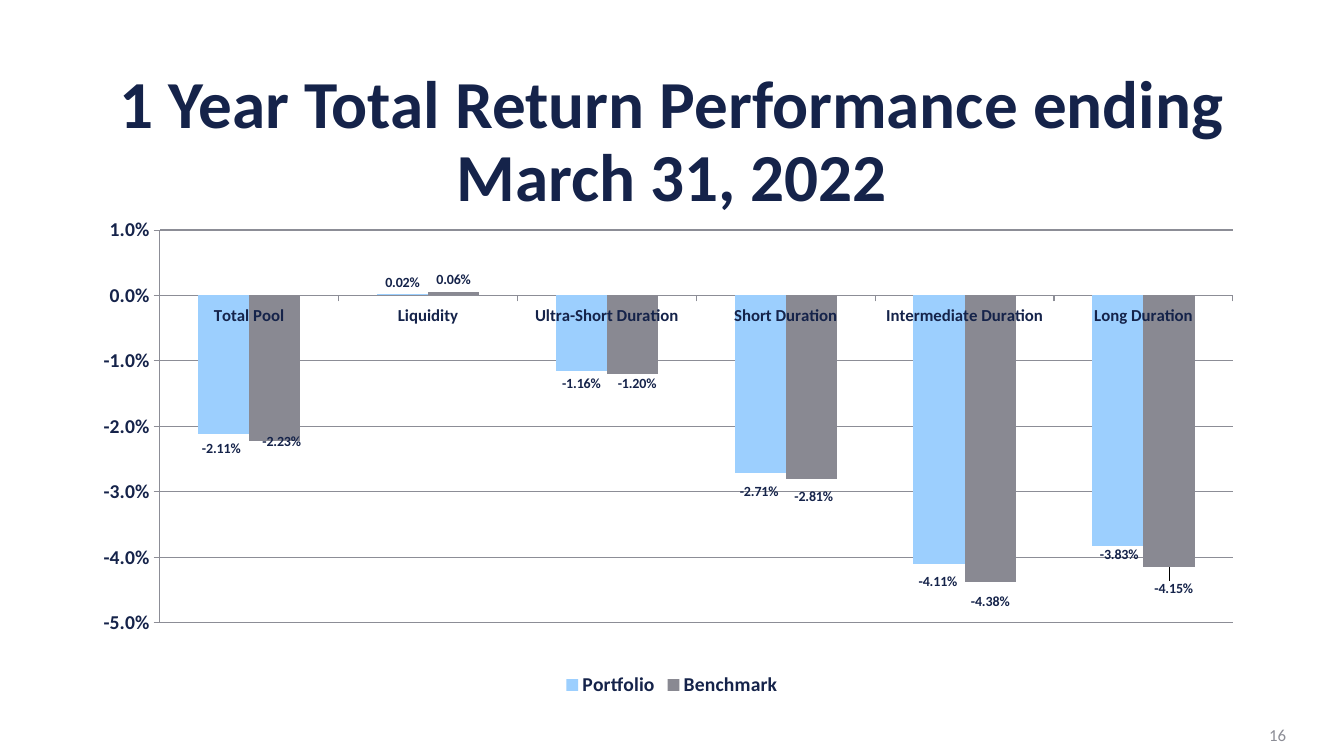
from lxml import etree
from pptx import Presentation
from pptx.chart.data import CategoryChartData
from pptx.dml.color import RGBColor
from pptx.enum.chart import (XL_CHART_TYPE, XL_LABEL_POSITION,
                             XL_LEGEND_POSITION, XL_TICK_MARK)
from pptx.enum.text import MSO_ANCHOR, PP_ALIGN
from pptx.oxml.ns import qn
from pptx.util import Cm, Pt

TITLE = "1 Year Total Return Performance ending March 31, 2022"
PAGE_NUMBER = "16"
CATEGORIES = ["Total Pool", "Liquidity", "Ultra-Short Duration",
              "Short Duration", "Intermediate Duration", "Long Duration"]
RETURNS = {
    "Portfolio": [-0.0211, 0.0002, -0.0116, -0.0271, -0.0411, -0.0383],
    "Benchmark": [-0.0223, 0.0006, -0.0120, -0.0281, -0.0438, -0.0415],
}
# Label shifts (right, down) in hundredths of the chart's width and height
LABEL_SHIFTS = {
    "Portfolio": [(-0.2, 0.6), (0, 0), (0, 0), (-0.1, 1.4), (-0.1, 1.2), (0.1, -0.6)],
    "Benchmark": [(0.6, -2.4), (0, 0), (0.4, -0.4), (0.2, 1.2), (0, 1.6), (0.4, 2)],
}
PLOT_AREA = {"x": 0.058, "y": 0.038, "w": 0.926, "h": 0.802}

THEME = {
    "font": "Calibri",
    "navy": RGBColor.from_string("15234A"),
    "gray": RGBColor.from_string("8C8D96"),
    "Portfolio": RGBColor.from_string("9CCFFE"),
    "Benchmark": RGBColor.from_string("898992"),
    "title": Pt(48), "chart": Pt(18), "scale": Pt(14), "category": Pt(12),
    "label": Pt(10), "page": Pt(12), "line": Pt(0.75),
}

PERCENT_LABEL = "0.00%"
MIDDLE = MSO_ANCHOR.MIDDLE
CENTER, RIGHT = PP_ALIGN.CENTER, PP_ALIGN.RIGHT
COLUMNS = XL_CHART_TYPE.COLUMN_CLUSTERED
OUTSIDE_END = XL_LABEL_POSITION.OUTSIDE_END
BOTTOM = XL_LEGEND_POSITION.BOTTOM
TICK_OUT, TICK_NONE = XL_TICK_MARK.OUTSIDE, XL_TICK_MARK.NONE


def style_font(font, size, color="navy", bold=True):
    font.name = THEME["font"]
    font.size = THEME[size]
    font.bold = bold
    font.color.rgb = THEME[color]


def add_text(page, place, text, size, color, bold, alignment):
    box = page.shapes.add_textbox(*place)
    box.text_frame.word_wrap = True
    box.text_frame.vertical_anchor = MIDDLE
    para = box.text_frame.paragraphs[0]
    para.text = text
    para.alignment = alignment
    style_font(para.font, size, color, bold)
    return para


def manual_layout(settings):
    """Return a c:layout element holding the given settings in order."""
    layout = etree.Element(qn("c:layout"))
    manual = etree.SubElement(layout, qn("c:manualLayout"))
    for tag, value in settings.items():
        etree.SubElement(manual, qn("c:" + tag)).set("val", str(value))
    return layout


def style_line(line):
    line.color.rgb = THEME["gray"]
    line.width = THEME["line"]


def style_axis(axis, size):
    axis.major_tick_mark = TICK_OUT
    axis.minor_tick_mark = TICK_NONE
    style_line(axis.format.line)
    style_font(axis.tick_labels.font, size)


def label_series(series, shifts):
    labels = series.data_labels
    labels.show_value = True
    labels.number_format = PERCENT_LABEL
    labels.number_format_is_linked = False
    labels.position = OUTSIDE_END
    style_font(labels.font, "label")
    for index in range(len(shifts)):
        label = series.points[index].data_label
        style_font(label.font, "label")
        label.position = OUTSIDE_END
    label_nodes = series._element.xpath("c:dLbls/c:dLbl")
    for node, (right, down) in zip(label_nodes, shifts):
        number_format = etree.Element(
            qn("c:numFmt"), formatCode=PERCENT_LABEL, sourceLinked="0")
        position = node.find(qn("c:idx"))
        position.addnext(number_format)
        position.addnext(manual_layout(
            {"x": round(right / 100, 4), "y": round(down / 100, 4)}))


def add_returns_chart(page, place):
    data = CategoryChartData(number_format=PERCENT_LABEL)
    data.categories = CATEGORIES
    for name, values in RETURNS.items():
        data.add_series(name, values)
    chart = page.shapes.add_chart(COLUMNS, *place, data).chart
    chart.has_title = False
    style_font(chart.font, "chart", bold=False)

    chart.has_legend = True
    chart.legend.position = BOTTOM
    chart.legend.include_in_layout = False
    style_font(chart.legend.font, "scale")

    style_axis(chart.category_axis, "category")
    scale = chart.value_axis
    style_axis(scale, "scale")
    scale.minimum_scale, scale.maximum_scale, scale.major_unit = -0.05, 0.01, 0.01
    scale.tick_labels.number_format = "0.0%"
    scale.tick_labels.number_format_is_linked = False
    scale.has_major_gridlines = True
    style_line(scale.major_gridlines.format.line)

    plot = chart.plots[0]
    plot.gap_width = 150
    plot.overlap = 0
    plot.vary_by_categories = False
    for series in plot.series:
        series.invert_if_negative = False
        series.format.fill.solid()
        series.format.fill.fore_color.rgb = THEME[series.name]
        label_series(series, LABEL_SHIFTS[series.name])

    plot_area = chart._chartSpace.xpath("c:chart/c:plotArea")[0]
    for old_layout in plot_area.findall(qn("c:layout")):
        plot_area.remove(old_layout)
    plot_area.insert(0, manual_layout(
        {"layoutTarget": "inner", "xMode": "edge", "yMode": "edge", **PLOT_AREA}))


def main():
    deck = Presentation()
    deck.slide_width, deck.slide_height = Cm(33.87), Cm(19.05)
    page = deck.slides.add_slide(deck.slide_layouts[6])
    left, width = Cm(2.33), Cm(29.21)
    title = add_text(page, (left, Cm(1.9), width, Cm(3.43)),
                     TITLE, "title", "navy", True, CENTER)
    title.line_spacing = 0.9
    add_returns_chart(page, (left, Cm(5.33), width, Cm(12.34)))
    add_text(page, (Cm(25.04), Cm(18.01), Cm(7.62), Cm(1.02)),
             PAGE_NUMBER, "page", "gray", False, RIGHT)
    deck.save("out.pptx")


if __name__ == "__main__":
    main()
